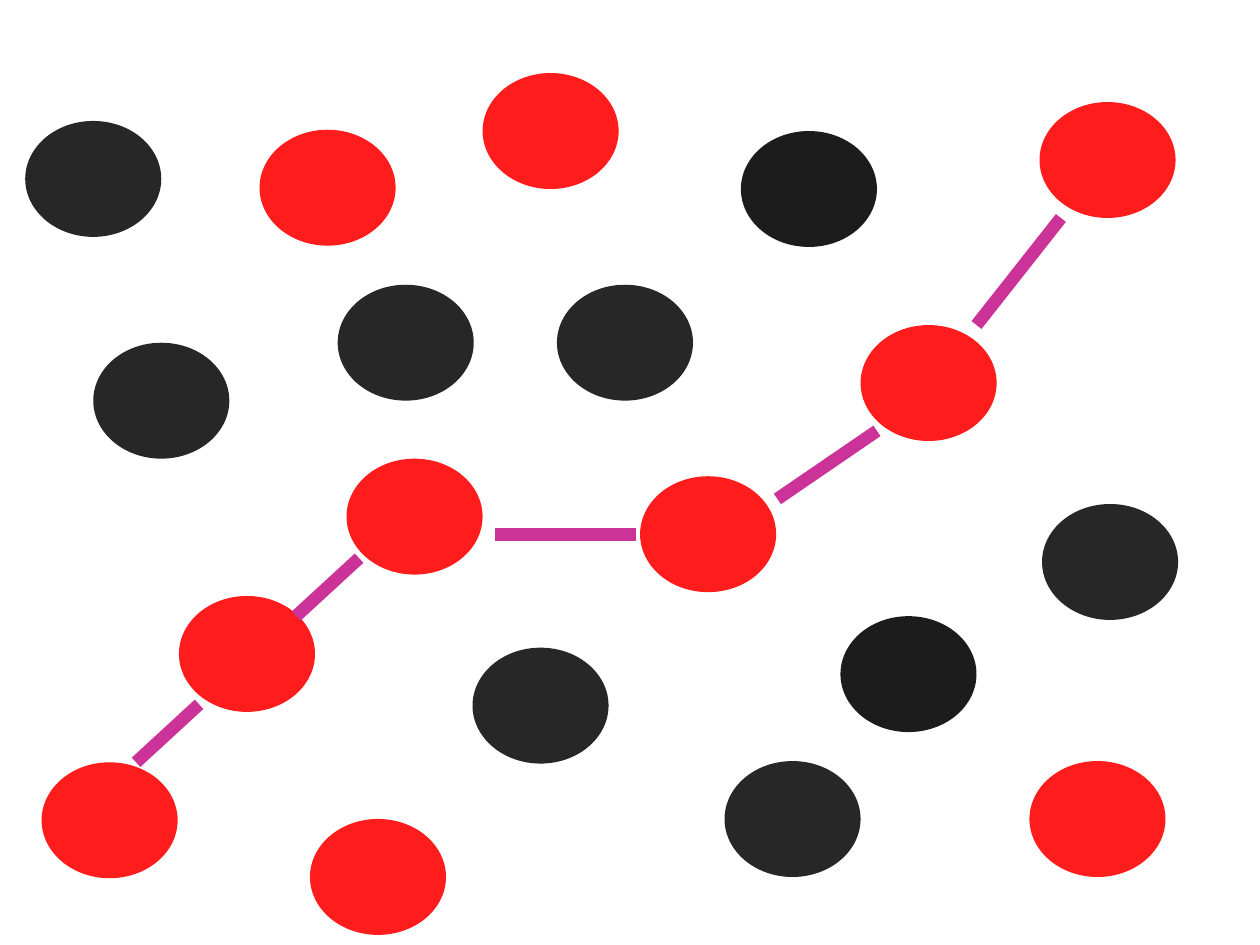
"""Draw scattered black and red dots, with a path of links through some red ones."""
from typing import NamedTuple

import pptx
import pptx.dml.color
import pptx.enum.shapes
import pptx.oxml
import pptx.oxml.ns
import pptx.util
from pptx.util import Inches

CHARCOAL, BLACK, RED, MAGENTA = "0D0D0D", "000000", "FF0000", "CC3399"
DOT_WIDTH, DOT_HEIGHT = 1.08, 0.92
DOT_OPACITY = 89
LINK_WEIGHT = 7.25


class Dot(NamedTuple):
    left: float
    top: float
    color: str


class Link(NamedTuple):
    x1: float
    y1: float
    x2: float
    y2: float


DOTS = [
    Dot(0.2, 0.96, CHARCOAL),
    Dot(4.42, 2.26, CHARCOAL),
    Dot(5.88, 1.04, BLACK),
    Dot(8.25, 0.81, RED),
    Dot(2.75, 3.64, RED),
    Dot(0.74, 2.72, CHARCOAL),
    Dot(6.67, 4.89, BLACK),
    Dot(1.42, 4.73, RED),
    Dot(5.75, 6.04, CHARCOAL),
    Dot(2.68, 2.26, CHARCOAL),
    Dot(8.27, 4, CHARCOAL),
    Dot(5.08, 3.78, RED),
    Dot(3.75, 5.14, CHARCOAL),
    Dot(8.17, 6.04, RED),
    Dot(6.83, 2.58, RED),
    Dot(3.83, 0.58, RED),
    Dot(0.33, 6.05, RED),
    Dot(2.46, 6.5, RED),
    Dot(2.06, 1.03, RED),
]

LINKS = [
    Link(1.08, 6.05, 1.58, 5.59),
    Link(2.35, 4.89, 2.85, 4.43),
    Link(6.17, 3.96, 6.96, 3.42),
    Link(7.75, 2.58, 8.42, 1.73),
    Link(3.93, 4.24, 5.05, 4.24),
]


def paint(fill, color: str) -> None:
    fill.solid()
    fill.fore_color.rgb = pptx.dml.color.RGBColor.from_string(color)


def draw_dot(slide, dot: Dot) -> None:
    ellipse = slide.shapes.add_shape(
        pptx.enum.shapes.MSO_SHAPE.OVAL,
        Inches(dot.left), Inches(dot.top), Inches(DOT_WIDTH), Inches(DOT_HEIGHT),
    )
    ellipse.shadow.inherit = False
    ellipse.line.fill.background()
    paint(ellipse.fill, dot.color)
    tint = ellipse._element.spPr.find(".//" + pptx.oxml.ns.qn("a:srgbClr"))
    alpha = pptx.oxml.parse_xml(
        f'<a:alpha {pptx.oxml.ns.nsdecls("a")} val="{DOT_OPACITY * 1000}"/>'
    )
    tint.append(alpha)


def draw_link(slide, link: Link) -> None:
    segment = slide.shapes.add_connector(
        pptx.enum.shapes.MSO_CONNECTOR.STRAIGHT, *map(Inches, link)
    )
    paint(segment.line.fill, MAGENTA)
    segment.line.width = pptx.util.Pt(LINK_WEIGHT)
    segment._element.spPr.append(
        pptx.oxml.parse_xml(f'<a:effectLst {pptx.oxml.ns.nsdecls("a")}/>')
    )


def main() -> None:
    deck = pptx.Presentation()
    for side, length in {"slide_width": 10, "slide_height": 7.5}.items():
        setattr(deck, side, Inches(length))
    slide = deck.slides.add_slide(deck.slide_layouts[6])
    for dot in DOTS:
        draw_dot(slide, dot)
    for link in LINKS:
        draw_link(slide, link)
    deck.save("out.pptx")


if __name__ == "__main__":
    main()
